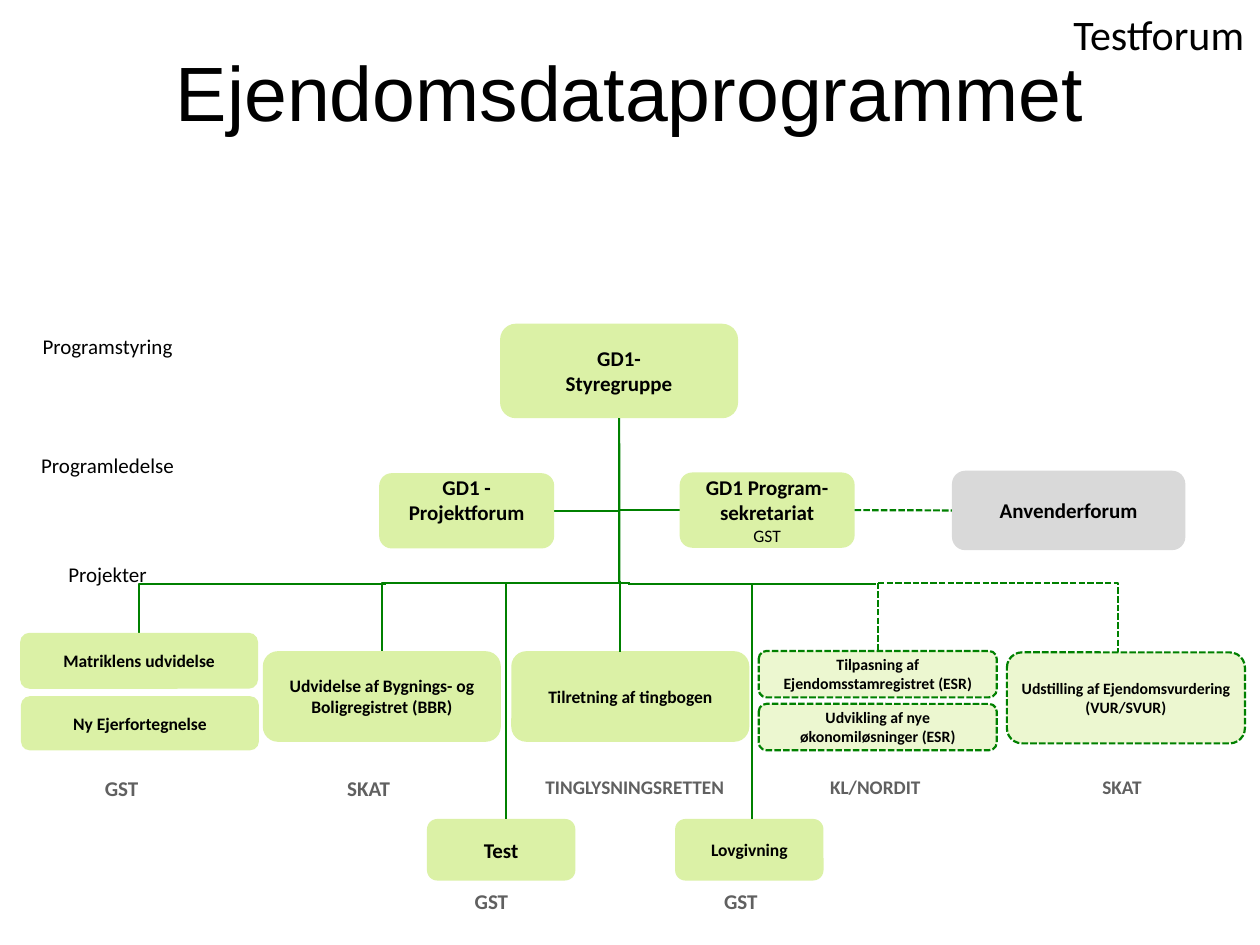
from dataclasses import dataclass
from typing import Optional

import pptx
import pptx.dml.color
import pptx.enum.dml
import pptx.enum.shapes
import pptx.enum.text
import pptx.oxml.ns
import pptx.util
from lxml import etree

Pt = pptx.util.Pt
Align = pptx.enum.text.PP_ALIGN
Anchor = pptx.enum.text.MSO_ANCHOR
Dash = pptx.enum.dml.MSO_LINE
Connector = pptx.enum.shapes.MSO_CONNECTOR
qn = pptx.oxml.ns.qn


@dataclass(frozen=True)
class Theme:
    font: str = "Calibri"
    title_font: str = "Arial"
    black: str = "000000"
    grey_text: str = "606060"
    green: str = "DBF1A6"
    grey: str = "D9D9D9"
    line: str = "008000"
    title: int = 44
    heading: int = 24
    normal: int = 12
    agency: int = 11
    small: int = 10
    tiny: int = 9
    weight: float = 1.25
    thin: float = 1
    planned_opacity: int = 52


THEME = Theme()


@dataclass(frozen=True)
class Box:
    name: str
    lines: tuple
    left: float
    top: float
    width: float
    height: float
    size: int = THEME.normal
    fill: str = THEME.green
    planned: bool = False
    side_margin: float = 3
    bottom_margin: float = 3.6
    note: Optional[str] = None


@dataclass(frozen=True)
class Label:
    text: str
    left: float
    top: float
    width: float
    height: float
    size: int = THEME.normal
    color: str = THEME.black
    bold: bool = False
    wrap: bool = False
    margins: tuple = (0, 3, 0, 3)


@dataclass(frozen=True)
class Link:
    start: tuple
    end: tuple
    dashed: bool = False
    weight: float = THEME.weight
    begin_box: Optional[str] = None
    begin_site: int = 2
    end_box: Optional[str] = None
    end_site: int = 0


@dataclass(frozen=True)
class Bend:
    left: float
    top: float
    width: float
    height: float
    rotation: int = 0
    flip: Optional[str] = None
    preset: str = "bentConnector2"
    adjust: Optional[int] = None
    dashed: bool = False


WIDE = 136
BUS = 333.6
LEADERSHIP = 291.8
TRUNK = 353.9
AGENCY_TOP = 440
TEAM_TOP = 468

BOXES = [
    Box("steering", ("GD1-", "Styregruppe"), 285.8, 185, WIDE, 54, side_margin=7.2),
    Box("forum", ("GD1 -", "Projektforum"), 216.7, 270.4, 100, 43, side_margin=7.2, bottom_margin=16),
    Box("office", ("GD1 Program-", "sekretariat"), 388.4, 270, 100, 43, side_margin=7.2, note="GST"),
    Box("users", ("Anvenderforum",), 544, 269, 133.4, 45.4, fill=THEME.grey),
    Box("cadastre", ("Matriklens udvidelse",), 11.5, 361.6, WIDE, 32, THEME.small),
    Box("owners", ("Ny Ejerfortegnelse",), 12, 397.8, WIDE, 31, THEME.small),
    Box("buildings", ("Udvidelse af Bygnings- og Boligregistret (BBR)",), 150.2, 372.1, WIDE, 51.8,
        THEME.small, side_margin=0),
    Box("registry", ("Tilretning af tingbogen",), 292.2, 372.1, WIDE, 51.8, THEME.small),
    Box("adaptation", ("Tilpasning af Ejendomsstamregistret (ESR)",), 433.6, 372, WIDE, 26.5,
        THEME.tiny, planned=True),
    Box("economy", ("Udvikling af nye økonomiløsninger (ESR)",), 433.6, 402.2, WIDE, 26.5,
        THEME.tiny, planned=True),
    Box("valuation", ("Udstilling af Ejendomsvurdering", "(VUR/SVUR)"), 575.4, 372.8, WIDE, 52,
        THEME.tiny, planned=True),
    Box("test", ("Test",), 244, TEAM_TOP, 84.8, 35.2),
    Box("law", ("Lovgivning",), 385.8, TEAM_TOP, 84.8, 35.2, THEME.small),
]

BENDS = [
    Bend(218.2, 333, 141.8, 39.1, 180, "flipV"),
    Bend(79.4, BUS, 140.9, 28, 180, "flipV"),
    Bend(308.7, 246.6, 53.1, 37.3, 90),
    Bend(344.8, 248.1, 52.6, 34.5, 270, "flipH"),
    Bend(501.6, 333, 137, 39.6, preset="bentConnector3", adjust=100100, dashed=True),
]

LINKS = [
    Link((TRUNK, 239), (TRUNK, BUS), begin_box="steering"),
    Link((354.3, 332), (354.3, 372.8)),
    Link((358.6, BUS), (500.6, BUS)),
    Link((488.4, LEADERSHIP), (544, LEADERSHIP), True, begin_box="office", begin_site=3,
         end_box="users", end_site=1),
    Link((501.6, 333), (501.6, 372), True, end_box="adaptation"),
    Link((289.2, BUS), (289.2, TEAM_TOP), weight=THEME.thin),
    Link((429.8, BUS), (429.8, TEAM_TOP), weight=THEME.thin),
]

ROWS = [("Programstyring", 185, 118), ("Programledelse", 252.7, 133.2), ("Projekter", 315.2, 68.4)]

AGENCIES = [
    ("GST", 56.9, AGENCY_TOP, 25.2, THEME.normal),
    ("SKAT", 195.6, AGENCY_TOP, 30.2, THEME.normal),
    ("TINGLYSNINGSRETTEN", 307.7, AGENCY_TOP, 110.2, THEME.agency),
    ("KL/NORDIT", 470.7, AGENCY_TOP, 59, THEME.agency),
    ("SKAT", 626.4, AGENCY_TOP, 29.5, THEME.agency),
    ("GST", 268.2, 504.7, 25.2, THEME.normal),
    ("GST", 410.7, 504.7, 25.2, THEME.normal),
]

LABELS = [
    Label("Testforum", 605.2, 1.4, 113.8, 36, THEME.heading, margins=(7.2, 3.6, 7.2, 3.6)),
    *[Label(text, 8.6, top, 105.8, height, wrap=True, margins=(7.2, 5.8, 7.2, 3.6))
      for text, top, height in ROWS],
    *[Label(text, left, top, width, 20, size, THEME.grey_text, True)
      for text, left, top, width, size in AGENCIES],
]


def rgb(color: str):
    return pptx.dml.color.RGBColor.from_string(color)


def apply(target, values: dict) -> None:
    for key, value in values.items():
        setattr(target, key, value)


def set_frame(frame, margins: tuple, anchor, wrap: bool) -> None:
    sides = ("margin_left", "margin_top", "margin_right", "margin_bottom")
    apply(frame, dict(zip(sides, map(Pt, margins))))
    apply(frame, {"vertical_anchor": anchor, "word_wrap": wrap})


def write_line(para, text: str, size: int, color: str, bold: bool, font: str = THEME.font) -> None:
    para.alignment = Align.CENTER
    span = para.add_run()
    span.text = text
    apply(span.font, {"name": font, "size": Pt(size), "bold": bold})
    span.font.color.rgb = rgb(color)


def style_line(line, weight: float, dashed: bool) -> None:
    line.color.rgb = rgb(THEME.line)
    line.width = Pt(weight)
    if dashed:
        line.dash_style = Dash.SQUARE_DOT


def draw_box(page, box: Box):
    shape = page.shapes.add_shape(
        pptx.enum.shapes.MSO_SHAPE.ROUNDED_RECTANGLE,
        Pt(box.left), Pt(box.top), Pt(box.width), Pt(box.height))
    shape.shadow.inherit = False
    shape.fill.solid()
    shape.fill.fore_color.rgb = rgb(box.fill)
    if box.planned:
        color = shape.fill._xPr.find(".//" + qn("a:srgbClr"))
        etree.SubElement(color, qn("a:alpha")).set("val", str(THEME.planned_opacity * 1000))
        style_line(shape.line, THEME.weight, True)
    else:
        shape.line.fill.background()
    frame = shape.text_frame
    set_frame(frame, (box.side_margin, 3.6, box.side_margin, box.bottom_margin), Anchor.MIDDLE, True)
    for index, text in enumerate(box.lines):
        para = frame.add_paragraph() if index else frame.paragraphs[0]
        write_line(para, text, box.size, THEME.black, True)
    if box.note:
        write_line(frame.add_paragraph(), box.note, THEME.small, THEME.black, False)
    return shape


def draw_label(page, label: Label) -> None:
    shape = page.shapes.add_textbox(Pt(label.left), Pt(label.top), Pt(label.width), Pt(label.height))
    set_frame(shape.text_frame, label.margins, Anchor.TOP, label.wrap)
    write_line(shape.text_frame.paragraphs[0], label.text, label.size, label.color, label.bold)


def add_line(page, kind, ends: tuple, weight: float, dashed: bool):
    connector = page.shapes.add_connector(kind, *map(Pt, ends))
    style_line(connector.line, weight, dashed)
    etree.SubElement(connector._element.spPr, qn("a:effectLst"))
    return connector


def draw_link(page, link: Link, shapes: dict) -> None:
    connector = add_line(page, Connector.STRAIGHT, link.start + link.end, link.weight, link.dashed)
    if link.begin_box:
        connector.begin_connect(shapes[link.begin_box], link.begin_site)
    if link.end_box:
        connector.end_connect(shapes[link.end_box], link.end_site)


def draw_bend(page, bend: Bend) -> None:
    ends = (bend.left, bend.top, bend.left + bend.width, bend.top + bend.height)
    properties = add_line(page, Connector.ELBOW, ends, THEME.weight, bend.dashed)._element.spPr
    frame, geometry = properties.find(qn("a:xfrm")), properties.find(qn("a:prstGeom"))
    geometry.set("prst", bend.preset)
    if bend.rotation:
        frame.set("rot", str(bend.rotation * 60000))
    if bend.flip:
        frame.set(bend.flip, "1")
    if bend.adjust:
        guide = etree.SubElement(geometry.find(qn("a:avLst")), qn("a:gd"))
        guide.set("name", "adj1")
        guide.set("fmla", f"val {bend.adjust}")


def draw_title(page) -> None:
    title = page.shapes.title
    apply(title, {"left": Pt(36), "top": Pt(21.6), "width": Pt(648), "height": Pt(90)})
    set_frame(title.text_frame, (7.2, 3.6, 7.2, 3.6), Anchor.TOP, True)
    write_line(title.text_frame.paragraphs[0], "Ejendomsdataprogrammet",
               THEME.title, THEME.black, False, THEME.title_font)


def main() -> None:
    deck = pptx.Presentation()
    apply(deck, {"slide_width": Pt(720), "slide_height": Pt(540)})
    page = deck.slides.add_slide(deck.slide_layouts[5])
    draw_title(page)
    for bend in BENDS:
        draw_bend(page, bend)
    shapes = {box.name: draw_box(page, box) for box in BOXES}
    for link in LINKS:
        draw_link(page, link, shapes)
    for label in LABELS:
        draw_label(page, label)
    deck.save("out.pptx")


if __name__ == "__main__":
    main()
